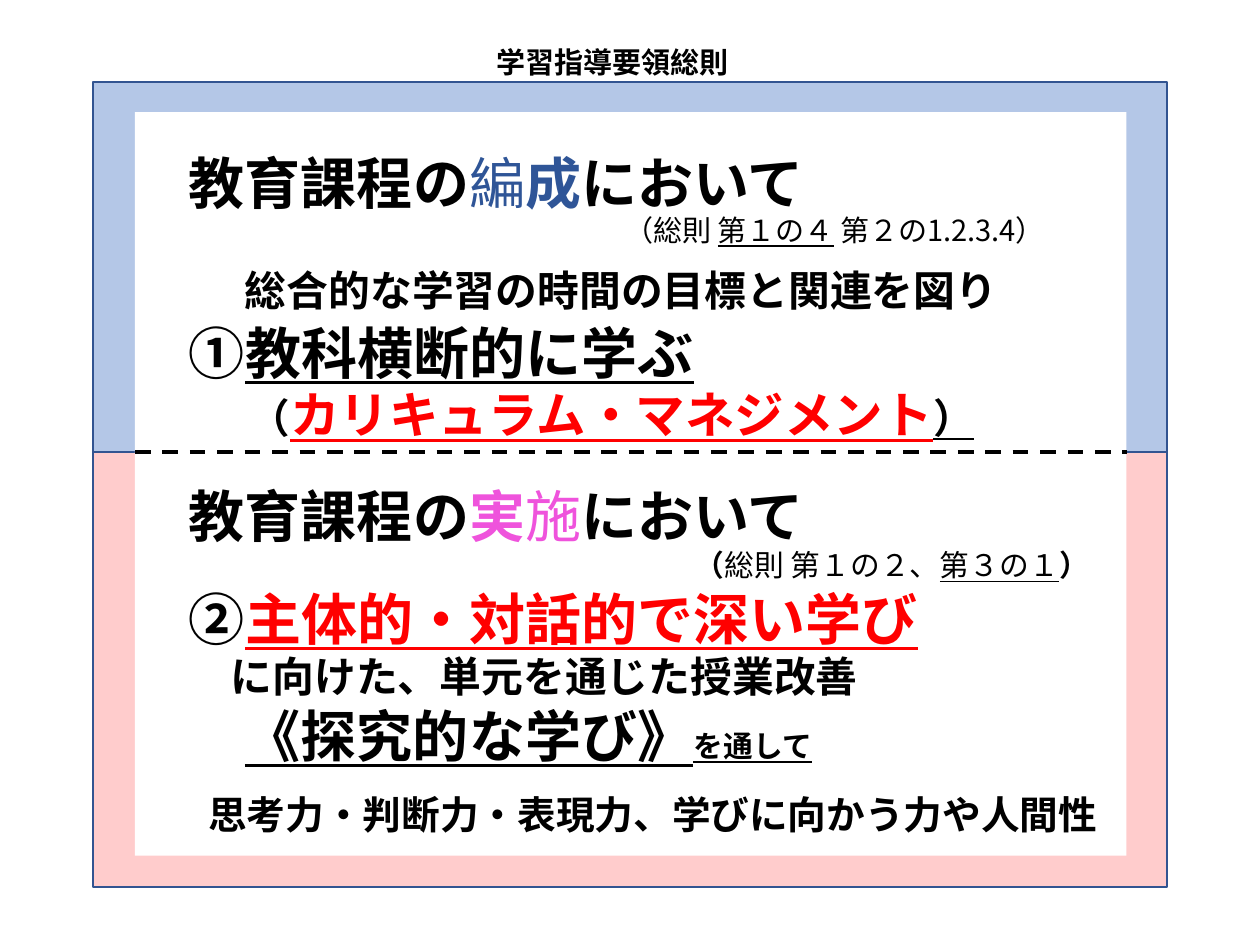
"""Build a slide on how the curriculum guidelines treat planning and practice."""
from lxml import etree
from pptx import Presentation, util as u
from pptx.dml.color import RGBColor
from pptx.enum import dml, shapes, text
from pptx.oxml.ns import qn

COLORS = {"black": "000000", "white": "FFFFFF", "blue": "2F5597", "pink": "EF53DC", "red": "FF0000",
          "planning": "B4C7E7", "practice": "FFCCCC", "border": "325491"}
CJK = "Noto Sans CJK JP"
LINE_RATIO = 1.16


def rgb(name):
    return RGBColor.from_string(COLORS[name])


def write_run(paragraph, wording, size, color="black", bold=True, underline=False, font=CJK):
    run = paragraph.add_run()
    run.text = wording
    run.font.size = u.Pt(size)
    run.font.bold = bold
    run.font.underline = underline
    run.font.color.rgb = rgb(color)
    run.font.name = font
    etree.SubElement(run.font._element, qn("a:ea")).set("typeface", CJK)
    paragraph.line_spacing = u.Pt(max(r.font.size.pt for r in paragraph.runs) * LINE_RATIO)


prs = Presentation()
prs.slide_width, prs.slide_height = u.Cm(25.4), u.Cm(19.05)
slide = prs.slides.add_slide(prs.slide_layouts[5])

heading = slide.shapes.title
heading.left, heading.top, heading.width, heading.height = u.Cm(9.75), u.Cm(0.79), u.Cm(5.26), u.Cm(0.86)
heading.text_frame.word_wrap = False
heading.text_frame.auto_size = text.MSO_AUTO_SIZE.NONE
heading.text_frame.vertical_anchor = text.MSO_ANCHOR.TOP
heading.text_frame.paragraphs[0].alignment = text.PP_ALIGN.LEFT
write_run(heading.text_frame.paragraphs[0], "学習指導要領総則", size=16.6, font="Calibri")

for left, top, width, height, fill, border in [
    (1.88, 9.12, 21.64, 8.76, "practice", "border"),
    (1.88, 1.65, 21.64, 7.47, "planning", "border"),
    (2.72, 2.26, 19.99, 14.99, "white", None),
]:
    panel = slide.shapes.add_shape(shapes.MSO_SHAPE.RECTANGLE, u.Cm(left), u.Cm(top), u.Cm(width), u.Cm(height))
    panel.shadow.inherit = False
    panel.fill.solid()
    panel.fill.fore_color.rgb = rgb(fill)
    if border:
        panel.line.color.rgb = rgb(border)
        panel.line.width = u.Pt(1)
    else:
        panel.line.fill.background()

divider = slide.shapes.add_connector(shapes.MSO_CONNECTOR.STRAIGHT, u.Cm(2.72), u.Cm(9.12), u.Cm(22.71), u.Cm(9.12))
divider.line.color.rgb = rgb("black")
divider.line.width = u.Pt(2.25)
divider.line.dash_style = dml.MSO_LINE.DASH
etree.SubElement(divider._element.spPr, qn("a:effectLst"))

plain = {"bold": False}
lined = {"underline": True}
key = {"color": "red", "underline": True}
body_lines = [
    (0, 0, [("教育課程の", 32, {}), ("編", 32, {"color": "blue", "bold": False}),
            ("成", 32, {"color": "blue"}), ("において", 32, {})]),
    (32, 29.2, [("総合的な学習の時間の目標と関連を図り", 23.9, {})]),
    (0, 3.1, [("①", 32, {}), ("教科横断的に学ぶ", 32, lined)]),
    (34.8, 0.2, [("（", 23.2, {}), ("カリキュラム・マネジメント", 28.3, key), ("）", 23.2, lined)]),
    (0, 23, [("教育課程の", 32, {}), ("実", 32, {"color": "pink"}),
             ("施", 32, {"color": "pink", "bold": False}), ("において", 32, {})]),
    (289, 0, [("（", 17, {}), ("総則 第１の２、", 17, plain),
              ("第３の１", 17, {"bold": False, "underline": True}), ("）", 17, {})]),
    (0, 2, [("②", 32, {}), ("主体的・対話的で深い学び", 32, key)]),
    (23.9, 0.6, [("に向けた、単元を通じた授業改善", 23.9, {})]),
    (32, 1.5, [("《探究的な学び》", 32, lined), ("を通して", 17, lined)]),
    (11, 13.5, [("思考力・判断力・表現力、学びに向かう力や人間性", 22.1, {})]),
]
reference_lines = [(0, 0, [("（総則 ", 16.6, plain), ("第１の４", 16.6, {"bold": False, "underline": True}),
                           (" 第２の1.2.3.4）", 16.6, plain)])]

for left, top, width, height, lines in [
    (3.56, 2.91, 19.13, 14.1, body_lines),
    (12.34, 4.18, 11.73, 0.95, reference_lines),
]:
    frame = slide.shapes.add_textbox(u.Cm(left), u.Cm(top), u.Cm(width), u.Cm(height)).text_frame
    frame.word_wrap = True
    for number, (indent, gap, runs) in enumerate(lines):
        paragraph = frame.add_paragraph() if number else frame.paragraphs[0]
        paragraph.space_before = u.Pt(gap)
        properties = paragraph._p.get_or_add_pPr()
        properties.set("marL", str(u.Pt(indent)))
        properties.set("indent", "0")
        for wording, size, style in runs:
            write_run(paragraph, wording, size, **style)

prs.save("out.pptx")
